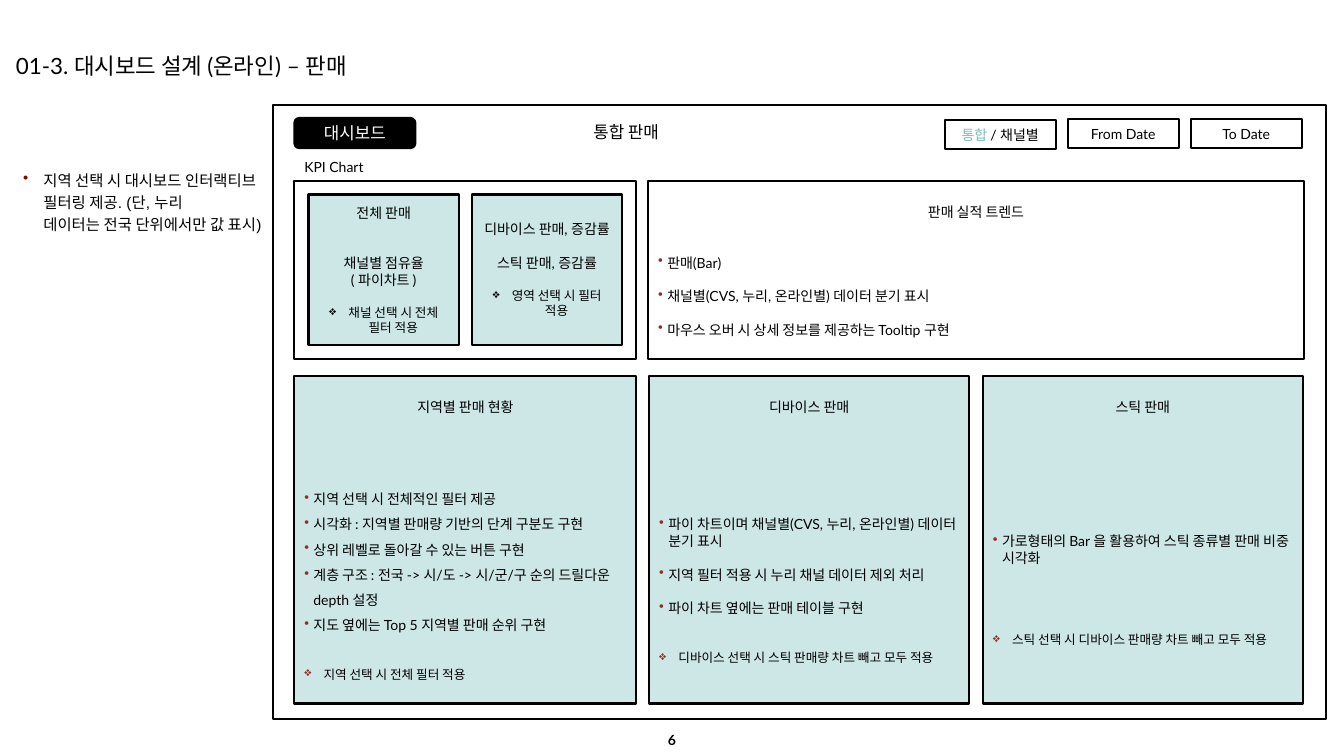
from dataclasses import dataclass
from typing import Any

from lxml import etree
from pptx import Presentation
from pptx import util as u
from pptx.dml import color as col
from pptx.enum import shapes, text
from pptx.oxml import ns

BLACK, WHITE, TEAL, MINT = "000000", "FFFFFF", "7BBCB8", "CDE6E6"
RED, DARK = "912F27", "7D0900"
MID, TOP = text.MSO_ANCHOR.MIDDLE, text.MSO_ANCHOR.TOP
LEFT, MAIN = text.PP_ALIGN.LEFT, text.PP_ALIGN.CENTER
RECT, ROUND = shapes.MSO_SHAPE.RECTANGLE, shapes.MSO_SHAPE.ROUNDED_RECTANGLE


@dataclass
class Para:
    words: Any  # a string, or (string, colour) pairs
    size: float = 10
    color: str = BLACK
    font: str = "Lato"
    bold: bool = False
    align: Any = LEFT
    mark: str = ""
    tint: str = RED
    hang: float = 0.09
    before: float = 0
    after: float = 0
    line: float = 1.0


@dataclass
class Box:
    left: float
    top: float
    width: float
    height: float
    paras: list
    fill: str = ""
    form: Any = RECT  # None makes a plain text box
    anchor: Any = TOP
    inset: tuple = (0.1, 0.05, 0.1, 0.05)


def rgb(code: str) -> col.RGBColor:
    return col.RGBColor.from_string(code)


def apply(target: Any, vals: dict) -> None:
    for name, val in vals.items():
        setattr(target, name, val)


# Paragraph kinds
def head(words: Any, **more: Any) -> Para:
    return Para(words, align=MAIN, **more)


def item(words: str, before: float = 0, **more: Any) -> Para:
    return Para(words, mark="•", before=before, **more)


def note(words: str, before: float, **more: Any) -> Para:
    return Para(words, size=9, mark="❖", hang=0.19, before=before, **more)


def tip(words: str) -> Para:
    return note(words, 12, align=MAIN, tint=BLACK)


# Drawing
def bullet(para: Any, data: Para) -> None:
    props = para._p.get_or_add_pPr()
    step = u.Inches(data.hang)
    props.set("marL", str(step))
    props.set("indent", str(-step))
    tint = etree.SubElement(props, ns.qn("a:buClr"))
    etree.SubElement(tint, ns.qn("a:srgbClr")).set("val", data.tint)
    etree.SubElement(props, ns.qn("a:buChar")).set("char", data.mark)


def write(para: Any, data: Para) -> None:
    if data.mark:
        bullet(para, data)
    apply(para, {"alignment": data.align, "line_spacing": data.line,
                 "space_before": u.Pt(data.before), "space_after": u.Pt(data.after)})
    pairs = [(data.words, data.color)] if isinstance(data.words, str) else data.words
    for words, tone in pairs:
        for i, row in enumerate(words.split("\n")):
            if i:
                para.add_line_break()
            run = para.add_run()
            run.text = row
            apply(run.font, {"size": u.Pt(data.size), "name": data.font, "bold": data.bold})
            run.font.color.rgb = rgb(tone)


def draw(slide: Any, box: Box) -> None:
    area = [u.Inches(n) for n in (box.left, box.top, box.width, box.height)]
    if box.form is None:
        shape = slide.shapes.add_textbox(*area)
    else:
        shape = slide.shapes.add_shape(box.form, *area)
        shape.shadow.inherit = False
        shape.line.color.rgb = rgb(BLACK)
        shape.line.width = u.Pt(1.5)
        if box.fill:
            shape.fill.solid()
            shape.fill.fore_color.rgb = rgb(box.fill)
        else:
            shape.fill.background()
    frame = shape.text_frame
    sides = ("margin_left", "margin_top", "margin_right", "margin_bottom")
    apply(frame, {"word_wrap": True, "vertical_anchor": box.anchor}
          | {side: u.Inches(n) for side, n in zip(sides, box.inset)})
    for i, data in enumerate(box.paras):
        write(frame.paragraphs[0] if i == 0 else frame.add_paragraph(), data)


def label(left: float, top: float, width: float, height: float, para: Para, **more: Any) -> Box:
    return Box(left, top, width, height, [para], form=None, **more)


def panel(left: float, top: float, width: float, height: float, fill: str, paras: list) -> Box:
    return Box(left, top, width, height, paras, fill, inset=(0.1, 0.22, 0.1, 0.05))


def card(left: float, paras: list) -> Box:
    return Box(left, 1.93, 1.49, 1.49, paras, MINT, anchor=MID)


def button(left: float, top: float, words: Any) -> Box:
    return Box(left, top, 1.1, 0.29, [head(words)], WHITE, anchor=MID)


# Panel wording
TREND = [head("판매 실적 트렌드"),
         item("판매(Bar)", 24),
         item("채널별(CVS, 누리, 온라인별) 데이터 분기 표시", 12),
         item("마우스 오버 시 상세 정보를 제공하는 Tooltip 구현", 12)]
REGION = [head("지역별 판매 현황"),
          item("지역 선택 시 전체적인 필터 제공", 48, line=1.5),
          item("시각화 : 지역별 판매량 기반의 단계 구분도 구현", line=1.5),
          item("상위 레벨로 돌아갈 수 있는 버튼 구현", line=1.5),
          item("계층 구조 : 전국 -> 시/도 -> 시/군/구 순의 드릴다운 depth 설정", line=1.5),
          item("지도 옆에는 Top 5 지역별 판매 순위 구현", line=1.5),
          note("지역 선택 시 전체 필터 적용", 18, line=1.5)]
DEVICE = [head("디바이스 판매"),
          item("파이 차트이며 채널별(CVS, 누리, 온라인별) 데이터 분기 표시", 72),
          item("지역 필터 적용 시 누리 채널 데이터 제외 처리", 12),
          item("파이 차트 옆에는 판매 테이블 구현", 12),
          note("디바이스 선택 시 스틱 판매량 차트 빼고 모두 적용", 24)]
STICK = [head("스틱 판매"),
         item("가로형태의 Bar 을 활용하여 스틱 종류별 판매 비중 시각화", 84),
         note("스틱 선택 시 디바이스 판매량 차트 빼고 모두 적용", 47)]
SHARE = [head("전체 판매"), head("채널별 점유율", before=24), head("( 파이차트 )"),
         tip("채널 선택 시 전체 필터 적용")]
GROWTH = [head("디바이스 판매, 증감률"), head("스틱 판매, 증감률", before=12),
          tip("영역 선택 시 필터 적용")]
GUIDE = item("지역 선택 시 대시보드 인터랙티브 필터링 제공. (단, 누리\n데이터는 전국 단위에서만 값 표시)",
             size=11, font="Arial", tint=DARK, hang=0.2, line=1.2, after=6)

BOXES = [
    # Page number, title and side guide
    label(6.4, 7.23, 0.53, 0.23, head("6", bold=True), anchor=MID),
    label(0.06, 0.5, 4.07, 0.48, Para("01-3. 대시보드 설계 (온라인) – 판매", size=16, line=0.9)),
    label(0.15, 1.29, 2.55, 2.64, GUIDE, inset=(0.08, 0.37, 0.08, 0.08)),
    # Dashboard frame and header
    Box(2.71, 1.04, 10.44, 6.09, []),
    Box(2.92, 1.17, 1.2, 0.3, [head("대시보드", size=12, color=WHITE)], BLACK, ROUND, MID),
    label(4.87, 1.16, 2.68, 0.3, head("통합 판매", size=12)),
    button(9.37, 1.19, [("통합 ", TEAL), ("/ 채널별", BLACK)]),
    button(10.59, 1.18, "From Date"),
    button(11.81, 1.18, "To Date"),
    label(2.92, 1.52, 2.68, 0.27, Para("KPI Chart")),
    # Upper row
    panel(2.92, 1.8, 3.39, 1.76, WHITE, []),
    card(3.06, SHARE),
    card(4.68, GROWTH),
    panel(6.43, 1.8, 6.5, 1.76, WHITE, TREND),
    # Lower row
    panel(2.92, 3.73, 3.39, 3.25, MINT, REGION),
    panel(6.44, 3.73, 3.17, 3.25, MINT, DEVICE),
    panel(9.75, 3.73, 3.17, 3.25, MINT, STICK),
]


def main() -> None:
    deck = Presentation()
    apply(deck, {"slide_width": u.Inches(13.33), "slide_height": u.Inches(7.5)})
    slide = deck.slides.add_slide(deck.slide_layouts[6])
    for box in BOXES:
        draw(slide, box)
    deck.save("out.pptx")


if __name__ == "__main__":
    main()
